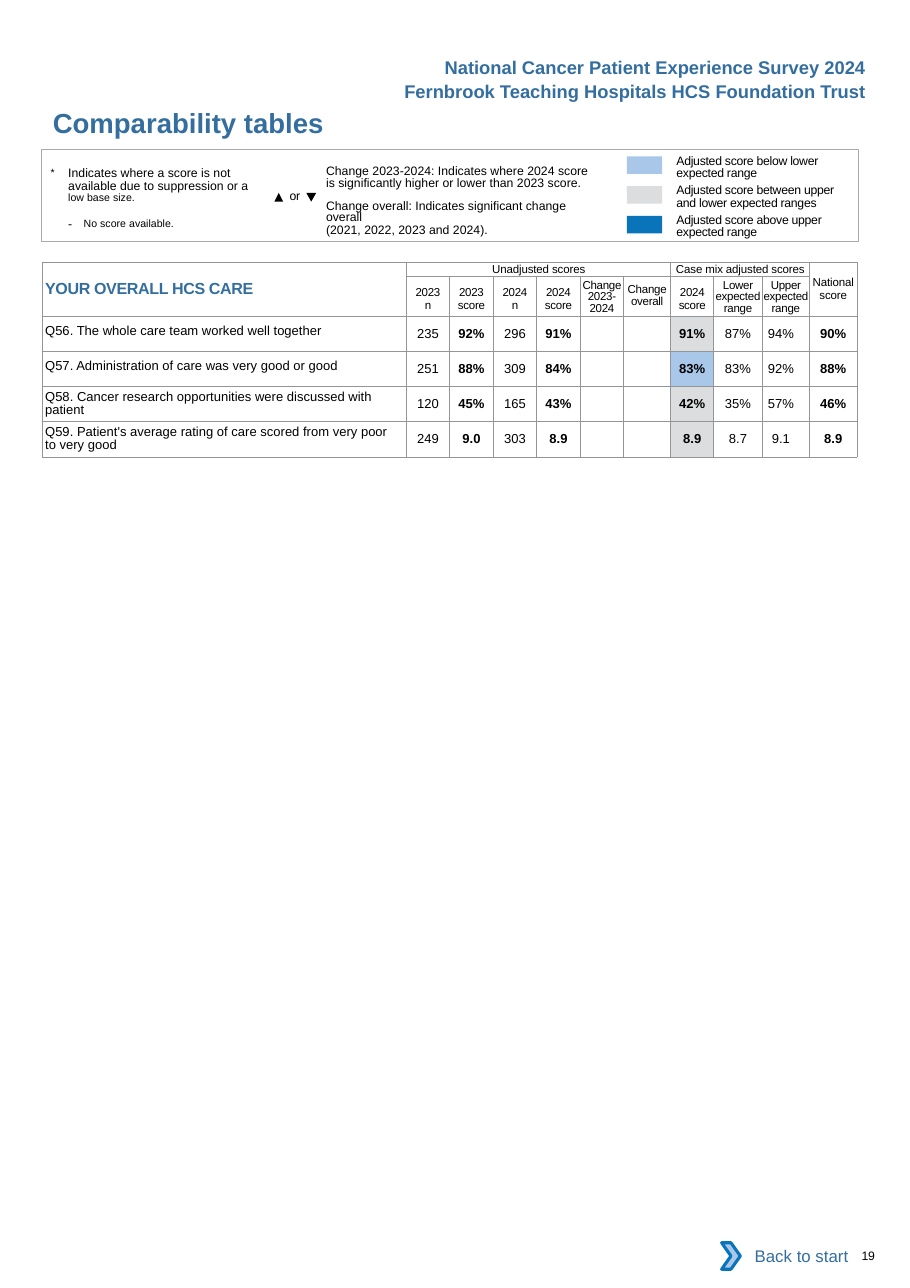
from dataclasses import dataclass

from pptx import Presentation
from pptx.dml.color import RGBColor
from pptx.enum.shapes import MSO_SHAPE
from pptx.enum.text import MSO_ANCHOR, PP_ALIGN
from pptx.oxml.xmlchemy import OxmlElement
from pptx.util import Pt

PX = 9144  # 100 px to the inch
FONT = "Arial"
BLUE, BLACK, GREY, WHITE = "336E9F", "000000", "939598", "FFFFFF"
BELOW, BETWEEN, ABOVE = "A8C7E9", "DCDDDE", "0A74BB"
LEFT, CENTER, RIGHT = PP_ALIGN.LEFT, PP_ALIGN.CENTER, PP_ALIGN.RIGHT
TOP, MIDDLE = MSO_ANCHOR.TOP, MSO_ANCHOR.MIDDLE
RECT, CHEVRON = MSO_SHAPE.RECTANGLE, MSO_SHAPE.CHEVRON
UP, DOWN = MSO_SHAPE.ISOSCELES_TRIANGLE, MSO_SHAPE.FLOWCHART_MERGE


@dataclass
class Run:
    text: str
    size: float = 8
    color: str = BLACK
    bold: bool = False
    spacing: float = 0
    raised: int = 0  # percent


@dataclass
class Para:
    runs: list[Run]
    align: PP_ALIGN = LEFT
    line: float = 0
    before: float = 0
    left: int = 0
    hang: int = 0


@dataclass
class Header:
    row: int
    col: int
    text: str
    line: float = 0
    top: int = 0
    right: int = 0


@dataclass
class Question:
    text: str
    values: list[str]
    fill: str
    top: int


def rgb(color: str) -> RGBColor:
    return RGBColor.from_string(color)


def write(tf, paras: list[Para]) -> None:
    for i, para in enumerate(paras):
        p = tf.paragraphs[0] if i == 0 else tf.add_paragraph()
        p.alignment = para.align
        if para.line:
            p.line_spacing = Pt(para.line)
        if para.before:
            p.space_before = Pt(para.before)
        if para.left:
            ppr = p._p.get_or_add_pPr()
            ppr.set("marL", str(para.left * PX))
            ppr.set("indent", str(-para.hang * PX))
        for run in para.runs:
            count = len(p.runs)
            for n, line in enumerate(run.text.split("\n")):
                if n:
                    p.add_line_break()
                p.add_run().text = line
            for r in p.runs[count:]:
                r.font.name, r.font.size, r.font.bold = FONT, Pt(run.size), run.bold
                r.font.color.rgb = rgb(run.color)
                rpr = r._r.get_or_add_rPr()
                rpr.set("spc", str(round(run.spacing * 100)))
                if run.raised:
                    rpr.set("baseline", str(run.raised * 1000))


def set_margins(box, left: int = 0, top: int = 0, right: int = 0, bottom: int = 0) -> None:
    box.margin_left, box.margin_top = left * PX, top * PX
    box.margin_right, box.margin_bottom = right * PX, bottom * PX


def add_text(s, x: int, y: int, w: int, h: int, paras: list[Para], side: int = 0, top: int = 0) -> None:
    tf = s.shapes.add_textbox(x * PX, y * PX, w * PX, h * PX).text_frame
    tf.word_wrap = True
    set_margins(tf, side, top, side, 0)
    write(tf, paras)


def add_shape(s, kind: MSO_SHAPE, x: int, y: int, w: int, h: int, fill: str = "", line: str = "", weight: float = 1):
    sp = s.shapes.add_shape(kind, x * PX, y * PX, w * PX, h * PX)
    sp.shadow.inherit = False
    if fill:
        sp.fill.solid()
        sp.fill.fore_color.rgb = rgb(fill)
    else:
        sp.fill.background()
    if line:
        sp.line.color.rgb, sp.line.width = rgb(line), Pt(weight)
    else:
        sp.line.fill.background()
    return sp


def prepare_cell(cell) -> None:
    """Thin grey borders, no margins, no fill, and small text height when empty."""
    set_margins(cell)
    cell.vertical_anchor = MIDDLE
    tcpr = cell._tc.get_or_add_tcPr()
    for side in ("L", "R", "T", "B"):
        ln = OxmlElement(f"a:ln{side}")
        ln.set("w", str(Pt(0.5)))
        fill, color = OxmlElement("a:solidFill"), OxmlElement("a:srgbClr")
        color.set("val", GREY)
        fill.append(color)
        ln.append(fill)
        tcpr.append(ln)
    cell.fill.background()
    end = OxmlElement("a:endParaRPr")
    end.set("sz", "750")
    cell.text_frame.paragraphs[0]._p.append(end)


HEADERS = [
    Header(0, 1, "Unadjusted scores"), Header(0, 7, "Case mix adjusted scores"),
    Header(0, 10, "National\nscore"),
    *[Header(1, c, t, 8.3, 5) for c, t in
      ((1, "2023\nn"), (2, "2023\nscore"), (3, "2024\nn"), (4, "2024\nscore"), (7, "2024\nscore"))],
    Header(1, 5, "Change\n2023-\n2024", 7.6, 2), Header(1, 6, "Change\noverall", 7.6),
    Header(1, 8, "Lower\nexpected\nrange", 7.6, 2), Header(1, 9, "Upper\nexpected\nrange", 7.6, 2),
]
QUESTIONS = [
    Question("Q56. The whole care team worked well together",
             ["235", "92%", "296", "91%", "", "", "91%", "87%", "94%", "90%"], BETWEEN, 7),
    Question("Q57. Administration of care was very good or good",
             ["251", "88%", "309", "84%", "", "", "83%", "83%", "92%", "88%"], BELOW, 7),
    Question("Q58. Cancer research opportunities were discussed with patient",
             ["120", "45%", "165", "43%", "", "", "42%", "35%", "57%", "46%"], BETWEEN, 4),
    Question("Q59. Patient's average rating of care scored from very poor to very good",
             ["249", "9.0", "303", "8.9", "", "", "8.9", "8.7", "9.1", "8.9"], BETWEEN, 4),
]
COLS = [331, 39, 40, 39, 40, 39, 43, 39, 44, 43, 43]
ROWS = [13, 36, 32, 32, 32, 32]
BOLD_COLS = (2, 4, 7, 10)
ADJUSTED, UPPER = 7, 9
SWATCHES = [(BELOW, "Adjusted score below lower\nexpected range"),
            (BETWEEN, "Adjusted score between upper\nand lower expected ranges"),
            (ABOVE, "Adjusted score above upper\nexpected range")]


def add_headings(s) -> None:
    for y, text in ((46, "National Cancer Patient Experience Survey 2024"),
                    (68, "Fernbrook Teaching Hospitals HCS Foundation Trust")):
        add_text(s, 336, y, 460, 30, [Para([Run(text, 12, BLUE, True)], RIGHT)], 10, 5)
    add_text(s, 47, 96, 413, 30, [Para([Run("Comparability tables", 18, BLUE, True)], left=1)])


def add_legend(s) -> None:
    add_shape(s, RECT, 38, 136, 741, 83, line="A9AAAD", weight=0.75)
    # Symbols for missing scores
    add_text(s, 46, 150, 200, 55, [
        Para([Run("*\t", 12, raised=3), Run("Indicates where a score is not\navailable due to suppression or a")],
             line=8.1, left=16, hang=16),
        Para([Run("low base size.", 12, raised=7)], line=8.8, left=16),
        Para([Run("- ", spacing=2.6), Run("No score available.", 12, raised=3)], before=2.1, left=16),
    ], top=3)
    # Change arrows
    add_shape(s, UP, 249, 175, 8, 8, BLACK)
    add_text(s, 253, 166, 32, 24, [Para([Run("or", spacing=-0.2)])], 10, 5)
    add_shape(s, DOWN, 278, 175, 9, 8, BLACK)
    add_text(s, 296, 150, 256, 55, [
        Para([Run("Change 2023-2024: Indicates where 2024 score\nis significantly higher or lower than 2023 score.")],
             line=8.1),
        Para([Run("Change overall: Indicates significant change\noverall")], line=7.3, before=7.3),
        Para([Run("(2021, 2022, 2023 and 2024).")], line=8.8),
    ])
    # Colour key
    for i, (color, _) in enumerate(SWATCHES):
        add_shape(s, RECT, 569, 142 + 27 * i, 32, 16, color)
    add_text(s, 614, 138, 160, 81,
             [Para([Run(text, spacing=-0.2)], line=8.1, before=3 if i else 0)
              for i, (_, text) in enumerate(SWATCHES)], top=3)


def add_scores(s) -> None:
    frame = s.shapes.add_table(len(ROWS), len(COLS), 38 * PX, 238 * PX, sum(COLS) * PX, sum(ROWS) * PX)
    table = frame.table
    table.first_row = table.horz_banding = False
    for col, w in zip(table.columns, COLS):
        col.width = w * PX
    for row, h in zip(table.rows, ROWS):
        row.height = h * PX
    for cell in table.iter_cells():
        prepare_cell(cell)
    for r1, c1, r2, c2 in ((0, 0, 1, 0), (0, 1, 0, 6), (0, 7, 0, 9), (0, 10, 1, 10)):
        table.cell(r1, c1).merge(table.cell(r2, c2))
    # Headers
    title = table.cell(0, 0)
    title.vertical_anchor = TOP
    set_margins(title, 3, 16)
    write(title.text_frame, [Para([Run("YOUR OVERALL HCS CARE", 10.5, BLUE, True, -0.2)])])
    for head in HEADERS:
        cell = table.cell(head.row, head.col)
        set_margins(cell, top=head.top, right=head.right)
        write(cell.text_frame, [Para([Run(head.text, 7.5, spacing=-0.2 if head.row else -0.1)], CENTER, head.line)])
    # Questions and scores
    for r, q in enumerate(QUESTIONS, 2):
        cell = table.cell(r, 0)
        cell.vertical_anchor = TOP
        set_margins(cell, 3, q.top, 8)
        write(cell.text_frame, [Para([Run(q.text, 8.5)], line=8.6 if q.top == 4 else 0)])
        for c, value in enumerate(q.values, 1):
            if value:
                write(table.cell(r, c).text_frame, [Para([Run(value, 8.5, bold=c in BOLD_COLS)], CENTER)])
        table.cell(r, UPPER).margin_right = 9 * PX
        adjusted = table.cell(r, ADJUSTED)
        adjusted.fill.solid()
        adjusted.fill.fore_color.rgb = rgb(q.fill)


def add_footer(s) -> None:
    back = add_shape(s, RECT, 662, 1119, 118, 42, WHITE)
    back.text_frame.vertical_anchor = MIDDLE
    write(back.text_frame, [Para([Run("Back to start", 11, BLUE)], RIGHT)])
    add_shape(s, CHEVRON, 655, 1128, 17, 24, BELOW, ABOVE, 2)
    add_text(s, 772, 1133, 51, 13, [Para([Run("19", spacing=-0.2)], left=10)])


def main() -> None:
    prs = Presentation()
    prs.slide_width, prs.slide_height = 826 * PX, 1169 * PX
    s = prs.slides.add_slide(prs.slide_layouts[6])
    add_headings(s)
    add_legend(s)
    add_scores(s)
    add_footer(s)
    prs.save("out.pptx")


if __name__ == "__main__":
    main()
